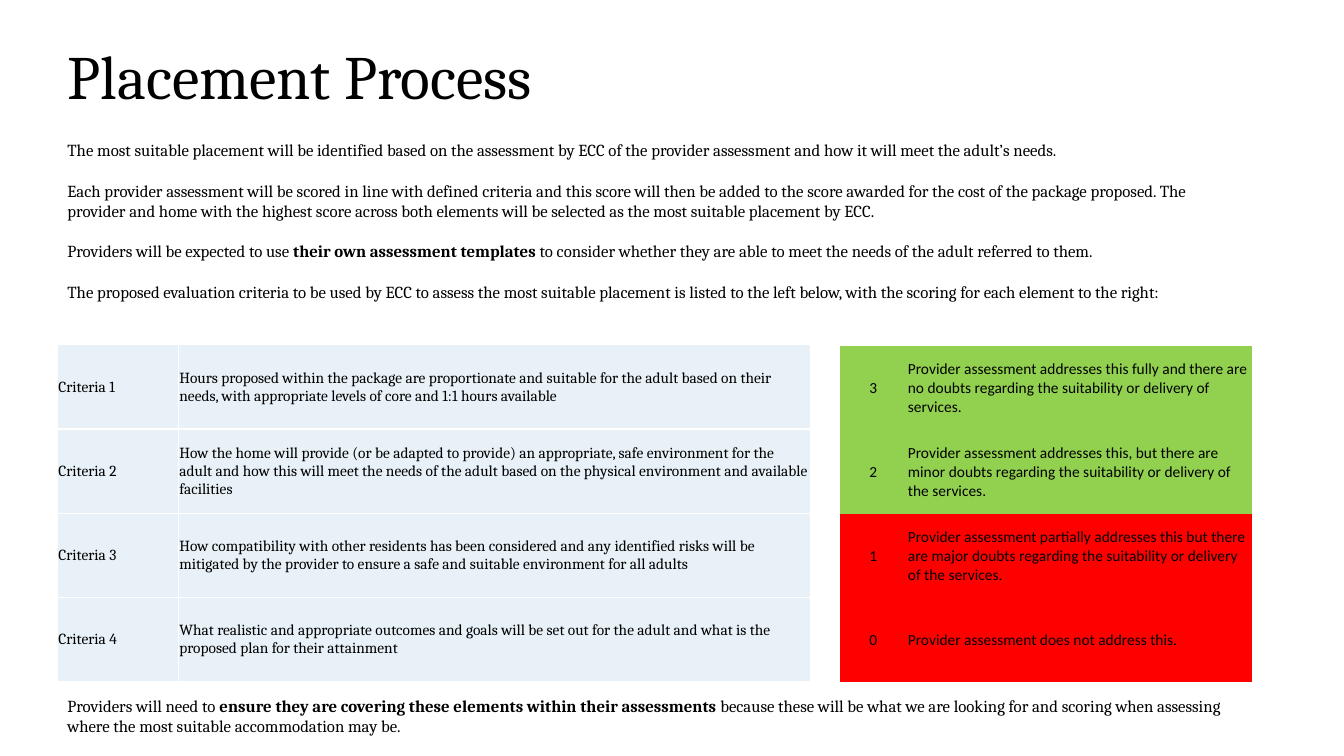
"""Build the Placement Process slide with its criteria and scoring tables."""
from dataclasses import dataclass

import pptx
import pptx.dml.color
import pptx.enum.text
import pptx.oxml
import pptx.oxml.ns
import pptx.slide
import pptx.text.text
import pptx.util

Cm = pptx.util.Cm
Pt = pptx.util.Pt
Align = pptx.enum.text.PP_ALIGN
Anchor = pptx.enum.text.MSO_ANCHOR

LEFT, WIDTH = 1.45, 30.07
SERIF, SANS = "Cambria", "Calibri"
PALE, GREEN, RED = "E7F1F7", "92D050", "FF0000"
ROW = 2.12


@dataclass
class Block:
    top: float
    height: float
    lines: list[str]


@dataclass
class Row:
    label: str
    text: str
    fill: str = PALE


@dataclass
class Grid:
    left: float
    top: float
    cols: tuple[float, float]
    font: str
    first: Align
    edge: str
    rows: list[Row]


INTRO = Block(3.4, 4.37, [
    "The most suitable placement will be identified based on the assessment by ECC of the provider "
    "assessment and how it will meet the adult’s needs.",
    "Each provider assessment will be scored in line with defined criteria and this score will then be "
    "added to the score awarded for the cost of the package proposed. The provider and home with the "
    "highest score across both elements will be selected as the most suitable placement by ECC.",
    "Providers will be expected to use **their own assessment templates** to consider whether they are "
    "able to meet the needs of the adult referred to them.",
    "The proposed evaluation criteria to be used by ECC to assess the most suitable placement is listed "
    "to the left below, with the scoring for each element to the right:",
])
CLOSE = Block(17.4, 1.27, [
    "Providers will need to **ensure they are covering these elements within their assessments** because "
    "these will be what we are looking for and scoring when assessing where the most suitable "
    "accommodation may be.",
])
SCORES = Grid(21.16, 8.71, (1.7, 8.69), SANS, Align.CENTER, "", [
    Row("3", "Provider assessment addresses this fully and there are no doubts regarding the "
        "suitability or delivery of services.", GREEN),
    Row("2", "Provider assessment addresses this, but there are minor doubts regarding the "
        "suitability or delivery of the services.", GREEN),
    Row("1", "Provider assessment partially addresses this but there are major doubts regarding the "
        "suitability or delivery of the services.", RED),
    Row("0", "Provider assessment does not address this.", RED),
])
NEEDS = Grid(LEFT, 8.69, (3.05, 15.93), SERIF, Align.LEFT, "FFFFFF", [
    Row("Criteria 1", "Hours proposed within the package are proportionate and suitable for the adult "
        "based on their needs, with appropriate levels of core and 1:1 hours available"),
    Row("Criteria 2", "How the home will provide (or be adapted to provide) an appropriate, safe "
        "environment for the adult and how this will meet the needs of the adult based on the physical "
        "environment and available facilities"),
    Row("Criteria 3", "How compatibility with other residents has been considered and any identified "
        "risks will be mitigated by the provider to ensure a safe and suitable environment for all adults"),
    Row("Criteria 4", "What realistic and appropriate outcomes and goals will be set out for the adult "
        "and what is the proposed plan for their attainment"),
])


def paint(code: str) -> pptx.dml.color.RGBColor:
    return pptx.dml.color.RGBColor.from_string(code)


def write(frame: pptx.text.text.TextFrame, lines: list[str], *, size: float, font: str = SERIF,
          align: Align = Align.LEFT, gap: float = 0, pitch: float = 1.0) -> None:
    for row, line in enumerate(lines):
        para = frame.add_paragraph() if row else frame.paragraphs[0]
        para.alignment = align
        para.line_spacing = pitch
        para.space_before = Pt(gap if row else 0)
        for part, text in enumerate(line.split("**")):
            run = para.add_run()
            run.text = text
            run.font.size = Pt(size)
            run.font.name = font
            run.font.bold = part % 2 == 1
            run.font.color.rgb = paint("000000")


def edge(cell, code: str) -> None:
    props = cell._tc.get_or_add_tcPr()
    fill = f'<a:solidFill><a:srgbClr val="{code}"/></a:solidFill>' if code else "<a:noFill/>"
    for spot, side in enumerate("LRTB"):
        props.insert(spot, pptx.oxml.parse_xml(
            f'<a:ln{side} {pptx.oxml.ns.nsdecls("a")} w="12700">{fill}</a:ln{side}>'))


def draw_grid(slide: pptx.slide.Slide, grid: Grid) -> None:
    count = len(grid.rows)
    table = slide.shapes.add_table(count, 2, Cm(grid.left), Cm(grid.top),
                                   Cm(sum(grid.cols)), Cm(ROW * count)).table
    table.first_row = table.horz_banding = False
    for col, width in zip(table.columns, grid.cols):
        col.width = Cm(width)
    for line, row in zip(table.rows, grid.rows):
        line.height = Cm(ROW)
        for cell, text, align in zip(line.cells, (row.label, row.text), (grid.first, Align.LEFT)):
            cell.margin_left = cell.margin_right = cell.margin_top = Cm(0.02)
            cell.margin_bottom = 0
            cell.vertical_anchor = Anchor.MIDDLE
            cell.fill.solid()
            cell.fill.fore_color.rgb = paint(row.fill)
            edge(cell, grid.edge)
            write(cell.text_frame, [text], size=11, font=grid.font, align=align)


def draw_block(slide: pptx.slide.Slide, block: Block) -> None:
    box = slide.shapes.add_textbox(Cm(LEFT), Cm(block.top), Cm(WIDTH), Cm(block.height))
    box.text_frame.word_wrap = True
    write(box.text_frame, block.lines, size=12, gap=14.5)


def draw_title(slide: pptx.slide.Slide, text: str) -> None:
    title = slide.shapes.title
    title.left, title.top, title.width, title.height = Cm(LEFT), Cm(1.02), Cm(WIDTH), Cm(1.96)
    title.text_frame.auto_size = pptx.enum.text.MSO_AUTO_SIZE.NONE
    title.text_frame.vertical_anchor = Anchor.MIDDLE
    write(title.text_frame, [text], size=44, pitch=0.9)


def main() -> None:
    deck = pptx.Presentation()
    deck.slide_width, deck.slide_height = Cm(33.87), Cm(19.05)
    slide = deck.slides.add_slide(deck.slide_layouts[5])
    draw_title(slide, "Placement Process")
    for grid in (SCORES, NEEDS):
        draw_grid(slide, grid)
    for block in (INTRO, CLOSE):
        draw_block(slide, block)
    deck.save("out.pptx")


if __name__ == "__main__":
    main()
